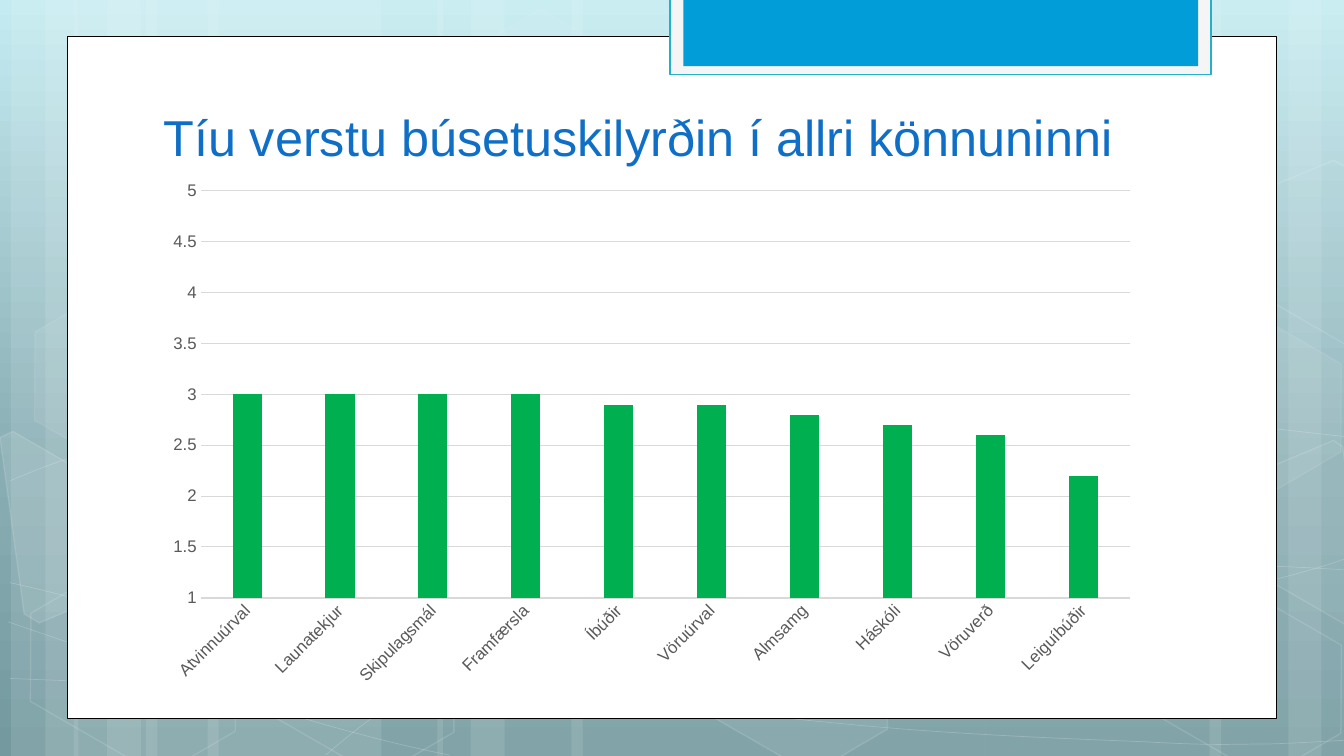
from copy import deepcopy
from lxml.etree import SubElement
from pptx import Presentation
from pptx.chart.data import CategoryChartData
from pptx.dml.color import RGBColor
from pptx.enum.chart import XL_CHART_TYPE as CT, XL_TICK_MARK as TM
from pptx.enum.shapes import MSO_SHAPE as SH
from pptx.enum.text import MSO_ANCHOR as ANC
from pptx.oxml.ns import qn
from pptx.util import Pt

TITLE = "Tíu verstu búsetuskilyrðin í allri könnuninni"
SCORES = {
    "Atvinnuúrval": 3, "Launatekjur": 3, "Skipulagsmál": 3, "Framfærsla": 3,
    "Íbúðir": 2.9, "Vöruúrval": 2.9, "Almsamg": 2.8, "Háskóli": 2.7,
    "Vöruverð": 2.6, "Leiguíbúðir": 2.2,
}
THEME = {
    "font": "Arial", "title_size": 36, "axis_size": 12, "chart_size": 10,
    "title": "0F6FC6", "bar": "00B050", "axis": "595959", "grid": "D9D9D9",
    "white": "FFFFFF", "black": "000000", "tab": "009DD9",
    "tab_frame": "F5F5F5", "tab_line": "21B2C9",
    "sky": [(0, "C4EBF1"), (0.62, "88ADB3"), (1, "749AA0")],
}
WIDTH, HEIGHT = 960, 540

STRIPES = [
    (104.4, 168), (8, 48), (32.4, 80), (148.3, 168), (52.6, 48), (76.3, 80),
    (704.2, 168), (920.2, 48), (864, 80), (408.2, 296), (312.5, 48), (336.2, 80),
]
CURVES = [
    [(7.2, 484.6), (59, 486.7), (110.9, 488.9), (182.9, 488.2),
     (254.9, 487.4), (343.4, 486), (439.2, 478.8),
     (535.7, 471.6), (671.8, 457.9), (759.6, 444.2),
     (848.2, 430.6), (938.2, 409), (967, 396.7)],
    [(7.2, 343.4), (34.6, 331.9), (61.9, 321.1), (116.6, 310.3),
     (171.4, 299.5), (248.4, 283.7), (333.4, 278.6),
     (419, 273.6), (522, 272.9), (627.8, 278.6),
     (733.7, 284.4), (909.4, 306.7), (967, 312.5)],
    [(5.8, 444.2), (121.7, 483.8), (237.6, 523.4), (321.1, 539.3)],
    [(7.2, 416.2), (43.9, 424.1), (67, 432), (123.1, 443.5),
     (178.6, 454.3), (262.1, 472.3), (342, 484.6),
     (421.9, 496.8), (523.4, 509.8), (602.6, 517),
     (682.6, 524.9), (767.5, 527.8), (818.6, 529.9),
     (869, 532.8), (882, 531.4), (907.2, 531.4),
     (931.7, 530.6), (949.7, 529.2), (967, 528.5)],
    [(232.6, 539.3), (249.8, 524.9), (266.4, 510.5), (290.2, 497.5),
     (313.2, 484.6), (345.6, 470.2), (372.2, 460.1),
     (398.9, 450), (415.4, 445.7), (450.7, 438.5),
     (486, 431.3), (550.8, 421.2), (583.9, 416.2),
     (617.8, 411.1), (622.8, 411.1), (653, 409.7),
     (682.6, 407.5), (729.4, 405.4), (762.5, 404.6),
     (795.6, 403.9), (851, 404.6), (914.4, 404.6),
     (932.4, 405.4), (948.2, 406.1), (965.5, 407.5)],
]
HEXAGONS = [
    (320.4, 25.9, 4, 8), (476.6, 424.1, 6, 12), (10.8, 425.5, 0, 12),
    (13.7, 224.6, 7, 8), (167, 426.2, 0, 12), (800.6, 427, 0, 12),
    (800.6, 226.1, 7, 8),
]
HEXAGON_SIZE = (168.5, 109.4)
SHARDS = [
    ([(0, 312.5), (9.4, 308.2), (82.8, 350.6), (91.4, 418.3),
      (28.1, 445), (17.3, 438.5)], 10),
    ([(889.2, 341.3), (952.6, 314.6), (959, 319), (977, 450),
      (971.3, 452.2), (897.8, 409.7)], 4),
    ([(889.2, 141.1), (952.6, 114.5), (960.5, 118.8), (977, 249.1),
      (971.3, 252), (897.8, 209.5)], 0),
]
PANELS = [
    ((48, 26, 864, 487), "white", "black", 0.5),
    ((478.8, -1.4, 386.2, 54.7), "tab_frame", "tab_line", 1.25),
    ((488.2, -1.4, 367.7, 48.7), "tab", None, 0),
]
TITLE_BOX = (109.6, 60.1, 737.3, 62.6)
CHART_BOX = (109.6, 122.4, 711.6, 374.5)


def rgb(name):
    return RGBColor.from_string(THEME[name])


def paint(fill, color, alpha=100):
    if color is None or alpha == 0:
        fill.background()
        return
    fill.solid()
    fill.fore_color.rgb = rgb(color)
    if alpha < 100:
        clr = fill._xPr.find(qn("a:solidFill"))[0]
        SubElement(clr, qn("a:alpha")).set("val", str(alpha * 1000))


def style(sp, fill, line, width=0, fill_alpha=100, line_alpha=100):
    sp.shadow.inherit = False
    paint(sp.fill, fill, fill_alpha)
    paint(sp.line.fill, line, line_alpha)
    if line:
        sp.line.width = Pt(width)


def add_shape(s, kind, box):
    return s.shapes.add_shape(kind, *map(Pt, box))


def add_outline(s, points, close):
    (x, y), *rest = [(Pt(x), Pt(y)) for x, y in points]
    builder = s.shapes.build_freeform(x, y)
    builder.add_line_segments(rest, close=close)
    return builder.convert_to_shape()


def add_curve(s, points):
    sp = add_outline(s, points, False)
    outline = sp._element.xpath(".//a:pathLst/a:path")[0]
    segments = outline.findall(qn("a:lnTo"))
    for i in range(0, len(segments), 3):
        bezier = SubElement(outline, qn("a:cubicBezTo"))
        for segment in segments[i:i + 3]:
            bezier.append(segment[0])
            outline.remove(segment)
    return sp


def add_background(s):
    fill = s.background.fill
    fill.gradient()
    fill.gradient_angle = 270
    stops = s._element.xpath(".//a:gsLst")[0]
    stops.append(deepcopy(stops[0]))
    for stop, (position, color) in zip(fill.gradient_stops, THEME["sky"]):
        stop.position = position
        stop.color.rgb = RGBColor.from_string(color)


def add_decor(s):
    for x, w in STRIPES:
        style(add_shape(s, SH.RECTANGLE, (x, 0, w, HEIGHT)), "white", None, 0, 10)
    for points in CURVES:
        style(add_curve(s, points), None, "white", 0.5, 0, 20)
    for x, y, fill_alpha, line_alpha in HEXAGONS:
        sp = add_shape(s, SH.HEXAGON, (x, y, *HEXAGON_SIZE))
        sp.adjustments[0] = 0.285
        sp.rotation = 30
        style(sp, "white", "white", 1, fill_alpha, line_alpha)
    for points, alpha in SHARDS:
        style(add_outline(s, points, True), "white", "white", 1, alpha, 12)
    for box, fill, line, width in PANELS:
        style(add_shape(s, SH.RECTANGLE, box), fill, line, width)


def set_font(font, size, color):
    font.name, font.size = THEME["font"], Pt(THEME[size])
    font.color.rgb = rgb(color)


def add_title(s):
    tf = s.shapes.add_textbox(*map(Pt, TITLE_BOX)).text_frame
    tf.word_wrap = True
    tf.vertical_anchor = ANC.BOTTOM
    p = tf.paragraphs[0]
    p.text = TITLE
    set_font(p.font, "title_size", "title")


def add_scores(s):
    data = CategoryChartData()
    data.categories = list(SCORES)
    data.add_series("Series 1", list(SCORES.values()))
    chart = s.shapes.add_chart(CT.COLUMN_CLUSTERED, *map(Pt, CHART_BOX), data).chart
    chart.has_legend = chart.has_title = False
    set_font(chart.font, "chart_size", "black")
    plot = chart.plots[0]
    plot.gap_width = 219
    plot.vary_by_categories = False
    paint(plot.series[0].format.fill, "bar")

    cat, val = chart.category_axis, chart.value_axis
    for axis in (cat, val):
        axis.major_tick_mark = axis.minor_tick_mark = TM.NONE
        set_font(axis.tick_labels.font, "axis_size", "axis")
    cat._element.xpath("c:txPr/a:bodyPr")[0].set("rot", "-60000000")
    paint(cat.format.line.fill, "grid")
    cat.format.line.width = Pt(1)
    val.minimum_scale, val.maximum_scale, val.major_unit = 1, 5, 0.5
    val.tick_labels.number_format = "General"
    val.tick_labels.number_format_is_linked = False
    val.format.line.fill.background()
    grid = val.major_gridlines.format.line
    paint(grid.fill, "grid")
    grid.width = Pt(0.75)


def main():
    prs = Presentation()
    prs.slide_width, prs.slide_height = Pt(WIDTH), Pt(HEIGHT)
    s = prs.slides.add_slide(prs.slide_layouts[6])
    for add_part in (add_background, add_decor, add_title, add_scores):
        add_part(s)
    prs.save("out.pptx")


if __name__ == "__main__":
    main()
